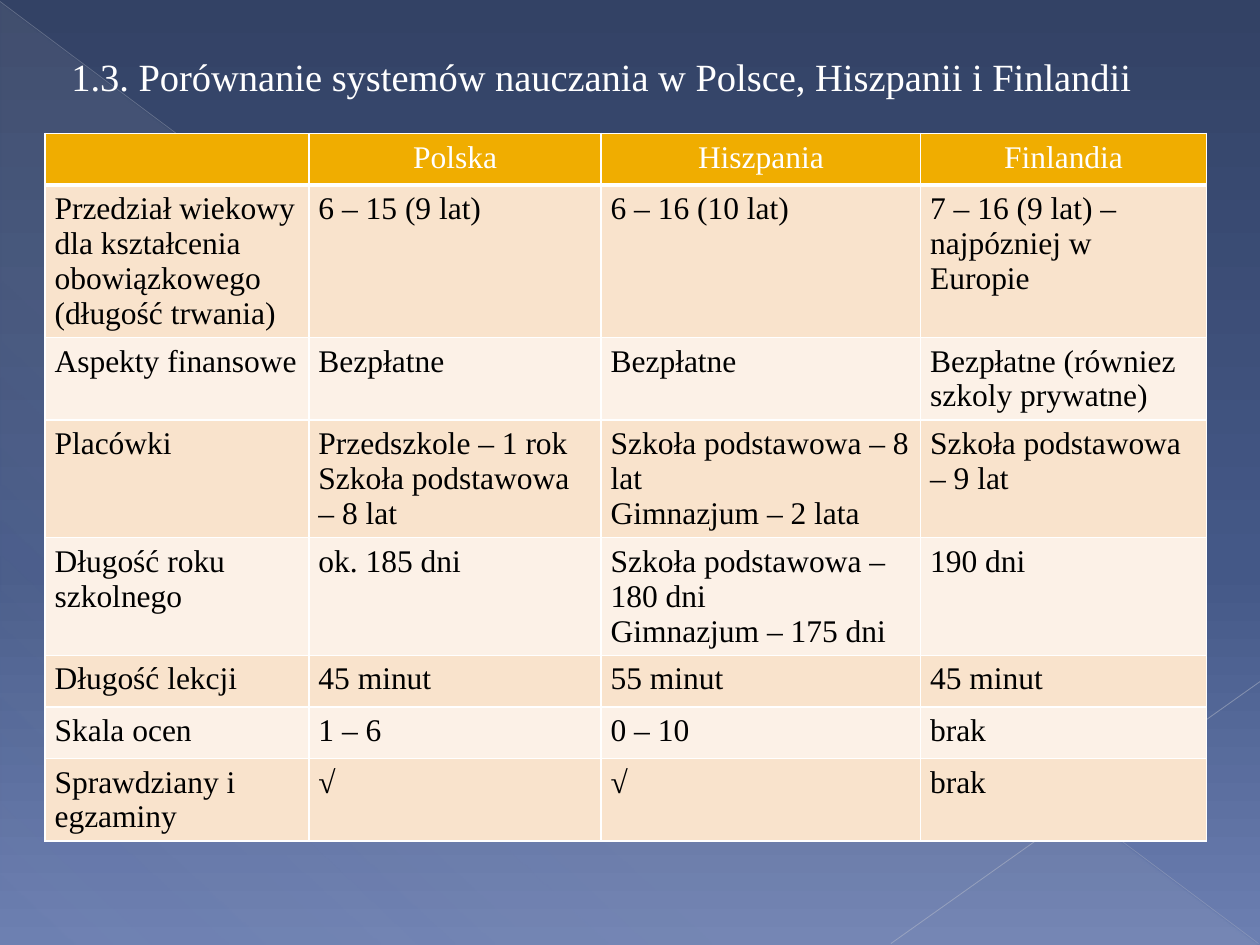
from lxml.etree import SubElement as Sub
from pptx import Presentation
from pptx.dml.color import RGBColor
from pptx.enum.shapes import MSO_CONNECTOR as CONN, MSO_SHAPE as SHAPE
from pptx.enum.text import MSO_AUTO_SIZE as AUTO, PP_ALIGN as ALIGN
from pptx.oxml.ns import qn
from pptx.util import Cm, Pt

TITLE = "1.3. Porównanie systemów nauczania w Polsce, Hiszpanii i Finlandii"
ROWS = [
    ("", "Polska", "Hiszpania", "Finlandia"),
    ("Przedział wiekowy\ndla kształcenia obowiązkowego\n(długość trwania)",
     "6 – 15 (9 lat)", "6 – 16 (10 lat)", "7 – 16 (9 lat) – najpózniej w Europie"),
    ("Aspekty finansowe", "Bezpłatne", "Bezpłatne", "Bezpłatne (równiez szkoly prywatne)"),
    ("Placówki", "Przedszkole – 1 rok\nSzkoła podstawowa – 8 lat",
     "Szkoła podstawowa – 8 lat\nGimnazjum – 2 lata", "Szkoła podstawowa – 9 lat"),
    ("Długość roku szkolnego", "ok. 185 dni",
     "Szkoła podstawowa – 180 dni\nGimnazjum – 175 dni", "190 dni"),
    ("Długość lekcji", "45 minut", "55 minut", "45 minut"),
    ("Skala ocen", "1 – 6", "0 – 10", "brak"),
    ("Sprawdziany i egzaminy", "√", "√", "brak"),
]
COL_WIDTHS = [5.32, 5.89, 6.44, 5.76]
ROW_HEIGHT = 1.04
FONT = "Times New Roman"
WHITE, BLACK, HEADER = "FFFFFF", "000000", "F0AD00"
BANDS = ["FCF1E7", "F9E3CC"]
MARGINS = {"margin_left": Cm(0.19), "margin_right": Cm(0.19),
           "margin_top": Cm(0.13), "margin_bottom": Cm(0.13)}
BACKGROUND = [(0, "334265", 100), (60, "445887", 100), (100, "6C7FB1", 100)]
SHEEN = [(0, "D4D4D6", 10), (70, "D4D4D6", 8), (100, "D4D4D6", 1)]
RAYS = [
    ((0, 0.03), (25.37, 19.02), "B9BDC8", 0.39, 35),
    ((25.4, 13.74), (17.96, 19.02), "C1C4CE", 0.47, 45),
]


def rgb(value):
    return RGBColor.from_string(value)


def set_attrs(obj, values):
    for name, value in values.items():
        setattr(obj, name, value)


def add_alpha(color, percent):
    Sub(color, qn("a:alpha"), val=str(percent * 1000))


def set_gradient(fill, element, stops, angle):
    fill.gradient()
    fill.gradient_angle = 360 - angle
    stop_list = element.xpath(".//a:gsLst")[0]
    for old in list(stop_list):
        stop_list.remove(old)
    for position, value, alpha in stops:
        stop = Sub(stop_list, qn("a:gs"), pos=str(position * 1000))
        color = Sub(stop, qn("a:srgbClr"), val=value)
        if alpha < 100:
            add_alpha(color, alpha)


def format_text(tf, size, color, align=ALIGN.LEFT):
    for p in tf.paragraphs:
        p.alignment = align
        for r in p.runs:
            set_attrs(r.font, {"name": FONT, "size": Pt(size), "bold": r.text == "√"})
            r.font.color.rgb = rgb(color)


def add_borders(cell, bottom):
    props = cell._tc.get_or_add_tcPr()
    for index, (side, width) in enumerate(zip("LRTB", (1, 1, 1, bottom))):
        line = props.makeelement(qn(f"a:ln{side}"), {"w": str(Pt(width))})
        Sub(Sub(line, qn("a:solidFill")), qn("a:srgbClr"), val=WHITE)
        props.insert(index, line)


def add_backdrop(s):
    set_gradient(s.background.fill, s.element, BACKGROUND, 90)
    sp = s.shapes.add_shape(SHAPE.RIGHT_TRIANGLE, Cm(0.02), Cm(0.05), Cm(25.35), Cm(19))
    sp.shadow.inherit = False
    sp.line.fill.background()
    set_gradient(sp.fill, sp.element, SHEEN, 133)
    for start, end, color, width, alpha in RAYS:
        ray = s.shapes.add_connector(CONN.STRAIGHT, *map(Cm, start + end))
        ray.line.width = Pt(width)
        ray.line.color.rgb = rgb(color)
        add_alpha(ray.element.xpath(".//a:ln//a:srgbClr")[0], alpha)
        Sub(ray.element.spPr, qn("a:effectLst"))


def add_comparison(s):
    frame = s.shapes.add_table(len(ROWS), len(COL_WIDTHS), Cm(0.91), Cm(2.69),
                               Cm(sum(COL_WIDTHS)), Cm(ROW_HEIGHT * len(ROWS)))
    table = frame.table
    for column, width in zip(table.columns, COL_WIDTHS):
        column.width = Cm(width)
    for i, texts in enumerate(ROWS):
        table.rows[i].height = Cm(ROW_HEIGHT)
        for j, text in enumerate(texts):
            cell = table.cell(i, j)
            cell.text = text
            set_attrs(cell, MARGINS)
            cell.fill.solid()
            cell.fill.fore_color.rgb = rgb(BANDS[i % 2] if i else HEADER)
            add_borders(cell, 1 if i else 3)
            if i:
                format_text(cell.text_frame, 18, BLACK)
            else:
                format_text(cell.text_frame, 18, WHITE, ALIGN.CENTER)
    frame.height = Cm(15.04)


def add_title(s):
    tf = s.shapes.add_textbox(Cm(1.19), Cm(0.94), Cm(22.53), Cm(1.19)).text_frame
    set_attrs(tf, {"text": TITLE, "word_wrap": True, "auto_size": AUTO.SHAPE_TO_FIT_TEXT})
    format_text(tf, 22, WHITE)


def main():
    prs = Presentation()
    set_attrs(prs, {"slide_width": Cm(25.4), "slide_height": Cm(19.05)})
    s = prs.slides.add_slide(prs.slide_layouts[6])
    add_backdrop(s)
    add_comparison(s)
    add_title(s)
    prs.save("out.pptx")


if __name__ == "__main__":
    main()
